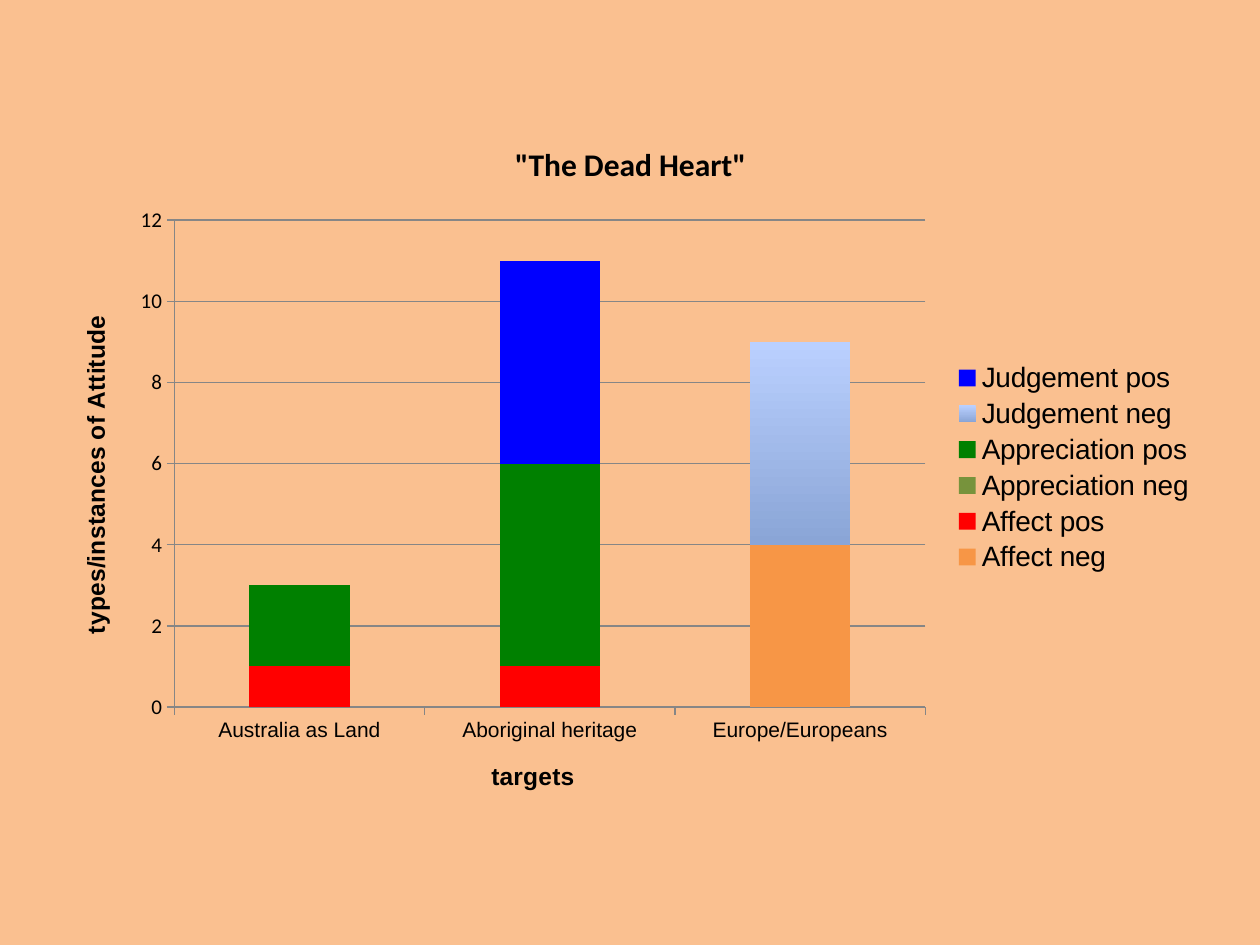
import pptx
import pptx.chart.data
import pptx.dml.color
import pptx.enum.chart
import pptx.oxml
import pptx.oxml.ns
import pptx.util
from pptx.util import Cm

CATEGORIES = ["Australia as Land", "Aboriginal heritage", "Europe/Europeans"]
SERIES = [
    ("Affect neg", (None, None, 4), "F79646"),
    ("Series 2", (0, None, None), "C0504D"),
    ("Affect pos", (1, 1, None), "FF0000"),
    ("Appreciation neg", (None, None, None), "77933C"),
    ("Series 5", (0, None, None), "4BACC6"),
    ("Appreciation pos", (2, 5, None), "008000"),
    ("Judgement neg", (None, None, 5), "4F81BD"),
    ("Series 8", (None, None, None), "C0504D"),
    ("Judgement pos", (None, 5, None), "0000FF"),
]
GRADIENTS = {"Judgement neg": ("BAD0FF", "8AA5D6")}


def color(value):
    return pptx.dml.color.RGBColor.from_string(value)


def chart_xml(content):
    return pptx.oxml.parse_xml(content.replace(
        ">", f" {pptx.oxml.ns.nsdecls('c')}>", 1))


class SlideBuilder:
    background = "FAC090"
    text = "000000"
    line = "868686"
    label_font = "Arial"
    number_font = "Calibri"

    def __init__(self, presentation):
        self.slide = presentation.slides.add_slide(presentation.slide_layouts[6])
        fill = self.slide.background.fill
        fill.solid()
        fill.fore_color.rgb = color(self.background)

    def style_font(self, font, name, size, bold=False):
        font.name = name
        font.size = pptx.util.Pt(size)
        font.bold = bold
        font.color.rgb = color(self.text)

    def title(self, owner, text, name, size):
        """Give a chart or an axis a bold title."""
        run = owner.text_frame.paragraphs[0].add_run()
        run.text = text
        self.style_font(run.font, name, size, bold=True)

    def axis(self, axis, title, tick_font):
        self.title(axis.axis_title, title, self.label_font, 14)
        self.style_font(axis.tick_labels.font, tick_font, 12)
        axis.major_tick_mark = pptx.enum.chart.XL_TICK_MARK.OUTSIDE
        axis.format.line.color.rgb = color(self.line)

    def stacked_chart(self, left, top, width, height, categories, series_list):
        data = pptx.chart.data.CategoryChartData()
        data.categories = categories
        for name, values, _ in series_list:
            data.add_series(name, values)
        chart = self.slide.shapes.add_chart(
            pptx.enum.chart.XL_CHART_TYPE.COLUMN_STACKED,
            left, top, width, height, data).chart
        self.style_font(chart.font, self.number_font, 10)
        plot = chart.plots[0]
        plot.overlap = 100
        plot.gap_width = 150
        plot.vary_by_categories = False
        for series, (name, _, fill_color) in zip(plot.series, series_list):
            self.fill_series(series.format.fill, fill_color, GRADIENTS.get(name))
        return chart

    def fill_series(self, fill, fill_color, gradient):
        if gradient is None:
            fill.solid()
            fill.fore_color.rgb = color(fill_color)
            return
        fill.gradient()
        fill.gradient_angle = 270
        for stop, stop_color in zip(fill.gradient_stops, gradient):
            stop.color.rgb = color(stop_color)

    def legend(self, chart, hidden):
        chart.has_legend = True
        legend = chart.legend
        legend.position = pptx.enum.chart.XL_LEGEND_POSITION.RIGHT
        legend.include_in_layout = False
        self.style_font(legend.font, self.label_font, 16)
        position = legend._element.find(pptx.oxml.ns.qn("c:legendPos"))
        for index in reversed(hidden):
            position.addnext(chart_xml(
                f'<c:legendEntry><c:idx val="{index}"/><c:delete val="1"/></c:legendEntry>'))

    def plot_area(self, chart, **fractions):
        """Fix the inner plot area as fractions of the chart."""
        area = chart._chartSpace.chart.plotArea
        for layout in area.findall(pptx.oxml.ns.qn("c:layout")):
            area.remove(layout)
        modes = "".join(f'<c:{key}Mode val="edge"/>' for key in "xy")
        sizes = "".join(f'<c:{key} val="{value}"/>' for key, value in fractions.items())
        area.insert(0, chart_xml(
            '<c:layout><c:manualLayout><c:layoutTarget val="inner"/>'
            f'{modes}{sizes}</c:manualLayout></c:layout>'))


def main():
    presentation = pptx.Presentation()
    presentation.slide_width = Cm(25.4)
    presentation.slide_height = Cm(19.05)
    builder = SlideBuilder(presentation)

    # Stacked columns
    chart = builder.stacked_chart(
        Cm(1.07), Cm(2.34), Cm(23.29), Cm(14.17), CATEGORIES, SERIES)
    chart.has_title = True
    builder.title(chart.chart_title, '"The Dead Heart"', builder.number_font, 18)
    chart.chart_title.include_in_layout = False
    builder.plot_area(chart, x=0.105, y=0.148, w=0.65, h=0.693)

    # Axes
    builder.axis(chart.category_axis, "targets", builder.label_font)
    value_axis = chart.value_axis
    builder.axis(value_axis, "types/instances of Attitude", builder.number_font)
    value_axis.minimum_scale = 0
    value_axis.maximum_scale = 12
    value_axis.major_unit = 2
    value_axis.has_major_gridlines = True
    value_axis.major_gridlines.format.line.color.rgb = color(builder.line)

    # Legend without the unnamed series
    hidden = [index for index, (name, _, _) in enumerate(SERIES)
              if name.startswith("Series")]
    builder.legend(chart, hidden)

    presentation.save("out.pptx")


if __name__ == "__main__":
    main()
